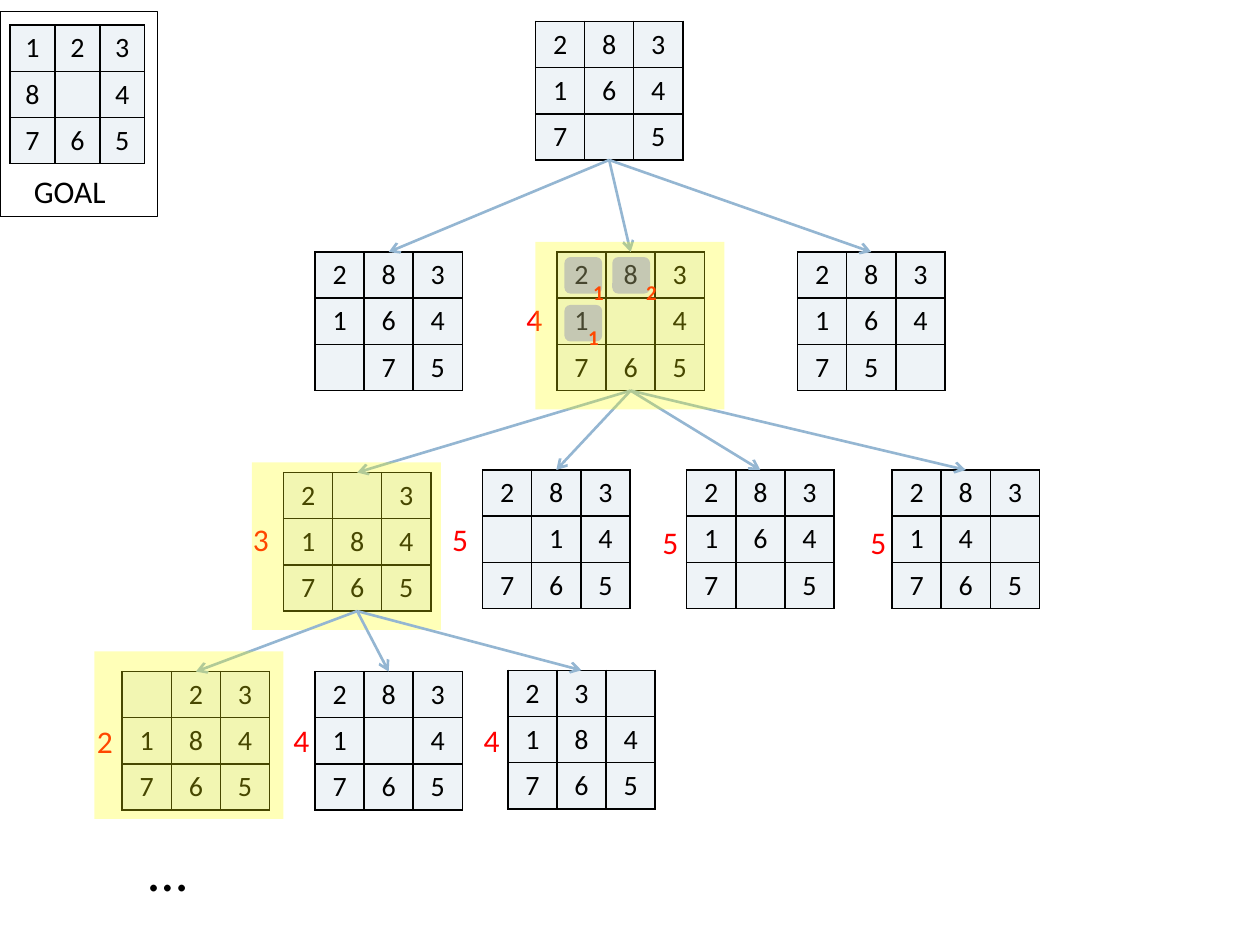
import pptx
import pptx.util
import pptx.dml.color
import pptx.enum.shapes
import pptx.enum.text
import pptx.oxml
import pptx.oxml.ns

Inches = pptx.util.Inches
Pt = pptx.util.Pt
KIND = pptx.enum.shapes.MSO_SHAPE
SIDE = 1.17
TALL = 1.1
RED = "FF0000"
BLACK = "000000"


def hue(code):
    """Turn a hex string into a colour."""
    return pptx.dml.color.RGBColor.from_string(code)


def node(tag, attrs="", body=""):
    """Make a drawing element from its tag, attributes and content."""
    space = pptx.oxml.ns.nsdecls("a")
    return pptx.oxml.parse_xml(f"<a:{tag} {space} {attrs}>{body}</a:{tag}>")


def write(para, text, size, code, bold=False):
    """Add one formatted run to a paragraph."""
    run = para.add_run()
    run.text = text
    run.font.name = "Calibri"
    run.font.size = Pt(size)
    run.font.bold = bold
    run.font.color.rgb = hue(code)


def edge(cell):
    """Draw thin black borders around a cell."""
    body = f'<a:solidFill><a:srgbClr val="{BLACK}"/></a:solidFill>'
    for side in "LRTB":
        cell._tc.get_or_add_tcPr().append(node("ln" + side, 'w="12700"', body))


def board(slide, left, top, rows, wide=SIDE):
    """Add a puzzle board; a dot in the rows stands for the gap."""
    frame = slide.shapes.add_table(
        3, 3, Inches(left), Inches(top), Inches(wide), Inches(TALL))
    table = frame.table
    table.first_row = table.horz_banding = False
    for y, row in enumerate(rows.split()):
        for x, digit in enumerate(row):
            cell = table.cell(y, x)
            cell.margin_left = cell.margin_right = 0
            cell.margin_top = cell.margin_bottom = 0
            cell.vertical_anchor = pptx.enum.text.MSO_ANCHOR.MIDDLE
            edge(cell)
            cell.fill.solid()
            cell.fill.fore_color.rgb = hue("EEF3F7")
            para = cell.text_frame.paragraphs[0]
            para.alignment = pptx.enum.text.PP_ALIGN.CENTER
            if digit != ".":
                write(para, digit, 16, BLACK)


def arrow(slide, start, end):
    """Link the foot of one board to the head of another."""
    line = slide.shapes.add_connector(
        pptx.enum.shapes.MSO_CONNECTOR.STRAIGHT,
        Inches(start[0] + SIDE / 2), Inches(start[1] + TALL),
        Inches(end[0] + SIDE / 2), Inches(end[1]))
    line.line.color.rgb = hue("94B6D2")
    line.line.width = Pt(1.5)
    line.line._get_or_add_ln().append(node("tailEnd", 'type="arrow"'))
    line._element.spPr.append(node("effectLst"))


def label(slide, text, box, size=18, code=RED, bold=False):
    """Add a short text that does not wrap."""
    frame = slide.shapes.add_textbox(*map(Inches, box)).text_frame
    frame.word_wrap = False
    frame.auto_size = pptx.enum.text.MSO_AUTO_SIZE.SHAPE_TO_FIT_TEXT
    write(frame.paragraphs[0], text, size, code, bold)


def tint(slide, kind, box, code, share):
    """Add a see-through patch without a line."""
    patch = slide.shapes.add_shape(kind, *map(Inches, box))
    patch.shadow.inherit = False
    patch.fill.solid()
    patch.fill.fore_color.rgb = hue(code)
    patch.line.fill.background()
    tone = patch._element.spPr.find(".//" + pptx.oxml.ns.qn("a:srgbClr"))
    tone.append(node("alpha", f'val="{share * 1000}"'))


def glow(slide, left, top):
    """Mark a chosen board in yellow."""
    tint(slide, KIND.RECTANGLE, (left, top, 1.5, 1.33), "FFFF00", 28)


def level(slide, parent, kids):
    """Add the boards of one level and the arrows that reach them."""
    for left, top, rows in kids:
        board(slide, left, top, rows)
    for left, top, rows in kids:
        arrow(slide, parent, (left, top))


def goal(slide):
    """Add the framed goal board."""
    board(slide, 0.08, 0.2, "123 8.4 765", 1.07)
    label(slide, "GOAL", (0.17, 1.32, 0.84, 0.4), code=BLACK)
    frame = slide.shapes.add_shape(
        KIND.RECTANGLE, Inches(0), Inches(0.09), Inches(1.25), Inches(1.63))
    frame.shadow.inherit = False
    frame.fill.background()
    frame.line.color.rgb = hue(BLACK)
    frame.line.width = Pt(0.79)


def main():
    """Build the search tree slide."""
    deck = pptx.Presentation()
    deck.slide_width, deck.slide_height = Inches(10), Inches(7.5)
    slide = deck.slides.add_slide(deck.slide_layouts[6])

    root, best, next_best = (4.25, 0.17), (4.42, 2), (2.25, 3.75)
    board(slide, *root, "283 164 7.5")
    level(slide, root, [
        (2.5, 2, "283 164 .75"),
        (*best, "283 1.4 765"),
        (6.33, 2, "283 164 75."),
    ])
    goal(slide)
    level(slide, best, [
        (*next_best, "2.3 184 765"),
        (3.83, 3.73, "283 .14 765"),
        (5.45, 3.73, "283 164 7.5"),
        (7.08, 3.73, "283 14. 765"),
    ])

    for left, top in [(4.48, 2.04), (4.48, 2.42), (4.86, 2.04)]:
        tint(slide, KIND.ROUNDED_RECTANGLE, (left, top, 0.3, 0.29), "0000FF", 26)
    for text, left, top in [("1", 4.61, 2.17), ("1", 4.57, 2.53), ("2", 5.03, 2.17)]:
        label(slide, text, (left, top, 0.29, 0.3), 12, bold=True)
    for text, left, top in [("4", 4.08, 2.33), ("3", 1.91, 4.08), ("5", 3.49, 4.08),
                            ("5", 5.16, 4.1), ("5", 6.81, 4.1), ("4", 3.74, 5.67),
                            ("4", 2.23, 5.67), ("2", 0.67, 5.68)]:
        label(slide, text, (left, top, 0.34, 0.4))

    glow(slide, 4.25, 1.92)
    glow(slide, 2, 3.67)
    level(slide, next_best, [
        (0.97, 5.33, ".23 184 765"),
        (2.5, 5.33, "283 1.4 765"),
        (4.03, 5.32, "23. 184 765"),
    ])
    glow(slide, 0.75, 5.17)
    label(slide, "…", (1.08, 6.58, 0.65, 0.64), 32, BLACK)
    deck.save("out.pptx")


if __name__ == "__main__":
    main()
